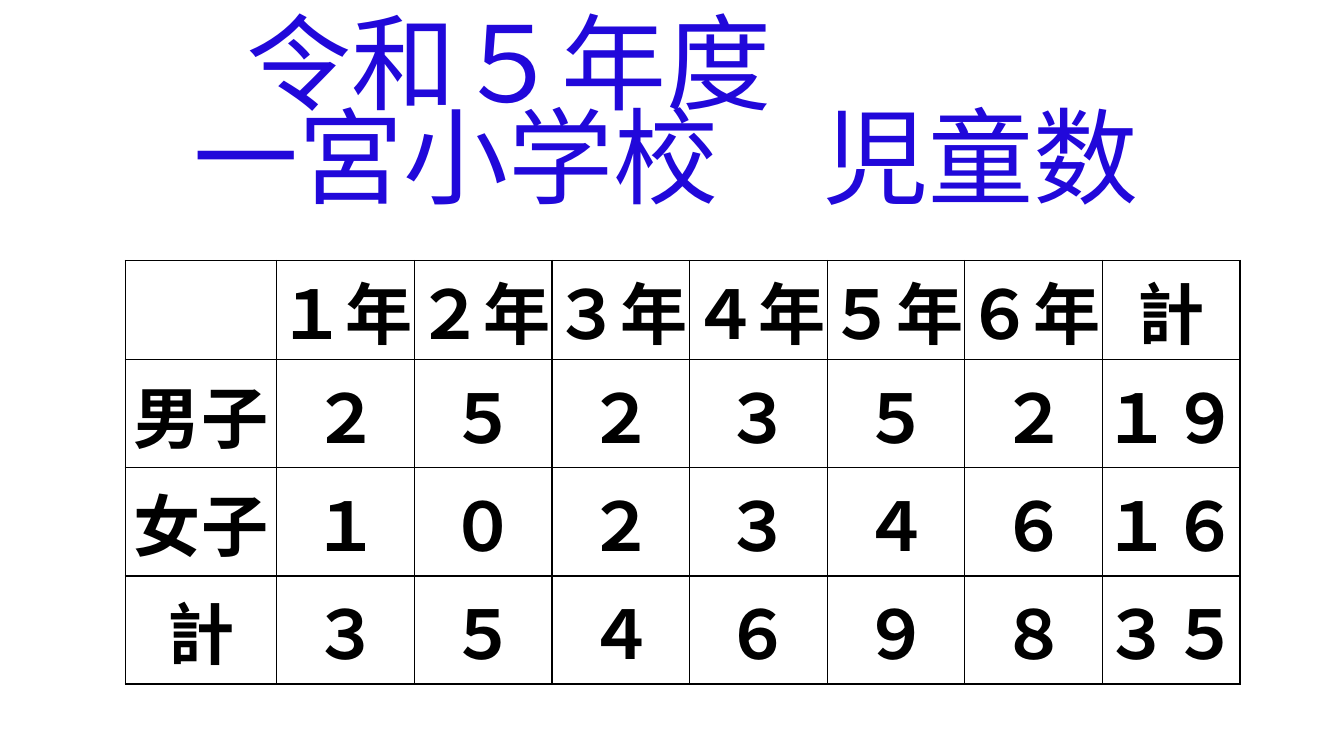
from dataclasses import dataclass

from lxml import etree
from pptx import Presentation
from pptx.dml.color import RGBColor
from pptx.enum.text import MSO_ANCHOR, PP_ALIGN
from pptx.oxml.ns import qn
from pptx.slide import Slide
from pptx.table import _Cell
from pptx.text.text import _Paragraph
from pptx.util import Pt

CENTER, LEFT = PP_ALIGN.CENTER, PP_ALIGN.LEFT
TOP, MIDDLE = MSO_ANCHOR.TOP, MSO_ANCHOR.MIDDLE


@dataclass(frozen=True)
class Theme:
    font: str = "Noto Sans CJK JP"
    title_color: str = "2108DA"
    ink: str = "000000"
    title_size: float = 75
    table_size: float = 48
    title_spacing: float = 0.75
    border: float = 1


@dataclass(frozen=True)
class Box:
    left: float
    top: float
    width: float
    height: float


@dataclass(frozen=True)
class CountRow:
    label: str
    counts: tuple[str, ...]
    height: float


THEME = Theme()
TITLE_BOX = Box(124.6, 10.1, 702.7, 160.6)
TITLE_TOP_INSET = 9
YEAR_LINE_SPAN = 8
TABLE_BOX = Box(89.5, 186, 796.3, 302.6)
LABEL_WIDTH = 108.3
CELL_INSET = 0.72
ROWS = (
    CountRow("", ("１年", "２年", "３年", "４年", "５年", "６年", "計"), 71.0),
    CountRow("男子", ("２", "５", "２", "３", "５", "２", "１９"), 77.2),
    CountRow("女子", ("１", "０", "２", "３", "４", "６", "１６"), 77.2),
    CountRow("計", ("３", "５", "４", "６", "９", "８", "３５"), 77.2),
)


def add_run(paragraph: _Paragraph, text: str, size: float, color: str, bold: bool) -> None:
    """Add one run in the theme font for Latin and East Asian text."""
    run = paragraph.add_run()
    run.text = text
    run.font.size = Pt(size)
    run.font.bold = bold
    run.font.color.rgb = RGBColor.from_string(color)
    run.font.name = THEME.font
    latin = run.font._element.find(qn("a:latin"))
    east_asian = etree.Element(qn("a:ea"), typeface=THEME.font)
    latin.addnext(east_asian)


def add_title(slide: Slide) -> None:
    """Add the year line and the school line."""
    title = slide.shapes.add_textbox(
        Pt(TITLE_BOX.left), Pt(TITLE_BOX.top), Pt(TITLE_BOX.width), Pt(TITLE_BOX.height)
    )
    frame = title.text_frame
    frame.word_wrap = True
    frame.vertical_anchor = TOP
    frame.margin_left = frame.margin_right = frame.margin_bottom = Pt(0)
    frame.margin_top = Pt(TITLE_TOP_INSET)
    year, school = frame.paragraphs[0], frame.add_paragraph()
    year_indent = (TITLE_BOX.width - YEAR_LINE_SPAN * THEME.title_size) / 2
    year._p.get_or_add_pPr().set("marL", str(Pt(year_indent)))
    for paragraph, text, alignment in (
        (year, "令和５年度", LEFT),
        (school, "一宮小学校　児童数", CENTER),
    ):
        paragraph.alignment = alignment
        paragraph.line_spacing = THEME.title_spacing
        add_run(paragraph, text, THEME.title_size, THEME.title_color, False)


def add_borders(cell: _Cell) -> None:
    """Draw a thin line on all four sides of a cell."""
    properties = cell._tc.get_or_add_tcPr()
    for position, side in enumerate(("lnL", "lnR", "lnT", "lnB")):
        line = etree.Element(qn(f"a:{side}"), w=str(Pt(THEME.border)))
        fill = etree.SubElement(line, qn("a:solidFill"))
        etree.SubElement(fill, qn("a:srgbClr"), val=THEME.ink)
        properties.insert(position, line)


def fill_cell(cell: _Cell, text: str) -> None:
    """Style a table cell and write its text."""
    cell.fill.background()
    cell.vertical_anchor = MIDDLE
    cell.margin_left = cell.margin_right = cell.margin_top = Pt(CELL_INSET)
    cell.margin_bottom = Pt(0)
    add_borders(cell)
    if text:
        paragraph = cell.text_frame.paragraphs[0]
        paragraph.alignment = CENTER
        add_run(paragraph, text, THEME.table_size, THEME.ink, True)


def add_counts(slide: Slide) -> None:
    """Add the table of pupils by grade."""
    grades = len(ROWS[0].counts)
    counts = slide.shapes.add_table(
        len(ROWS), grades + 1,
        Pt(TABLE_BOX.left), Pt(TABLE_BOX.top), Pt(TABLE_BOX.width), Pt(TABLE_BOX.height),
    ).table
    counts.first_row = counts.horz_banding = False
    grade_width = (TABLE_BOX.width - LABEL_WIDTH) / grades
    for index, column in enumerate(counts.columns):
        column.width = Pt(grade_width if index else LABEL_WIDTH)
    for row, entry in zip(counts.rows, ROWS):
        row.height = Pt(entry.height)
        for cell, text in zip(row.cells, (entry.label, *entry.counts)):
            fill_cell(cell, text)


def main() -> None:
    """Build and save the slide."""
    deck = Presentation()
    deck.slide_width, deck.slide_height = Pt(960), Pt(540)
    slide = deck.slides.add_slide(deck.slide_layouts[6])
    add_title(slide)
    add_counts(slide)
    deck.save("out.pptx")


if __name__ == "__main__":
    main()
